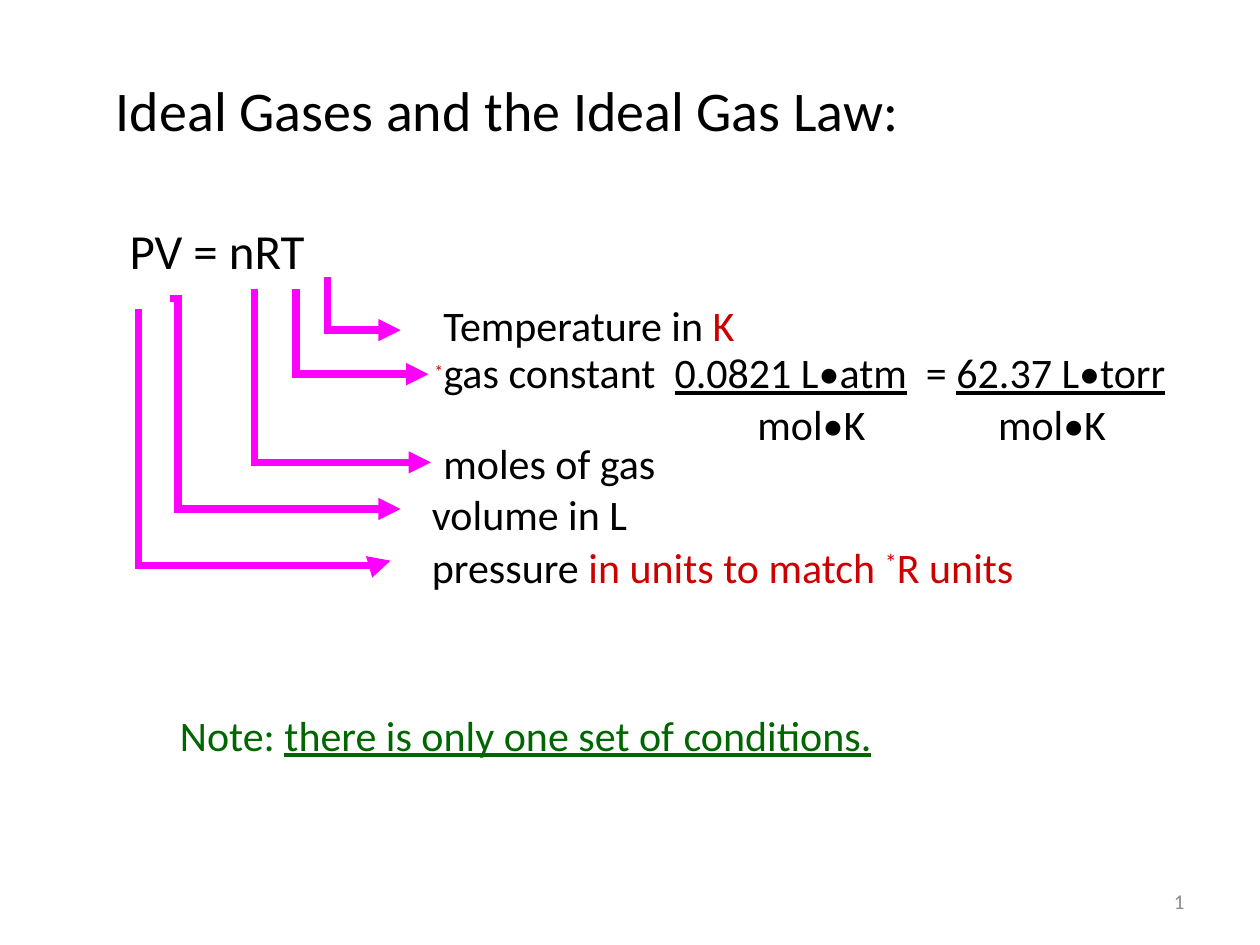
from lxml import etree
from pptx import Presentation
from pptx.dml.color import RGBColor
from pptx.enum.shapes import MSO_CONNECTOR
from pptx.enum.text import MSO_ANCHOR, PP_ALIGN
from pptx.oxml.ns import qn
from pptx.util import Inches, Pt

ELBOW = MSO_CONNECTOR.ELBOW
LEFT, CENTER, RIGHT = PP_ALIGN.LEFT, PP_ALIGN.CENTER, PP_ALIGN.RIGHT
TOP, MIDDLE = MSO_ANCHOR.TOP, MSO_ANCHOR.MIDDLE

BLACK = RGBColor(0x00, 0x00, 0x00)
RED = RGBColor(0xCC, 0x00, 0x00)
GREEN = RGBColor(0x00, 0x66, 0x00)
GRAY = RGBColor(0x8C, 0x8C, 0x8C)
MAGENTA = RGBColor(0xFF, 0x00, 0xFF)

FONT = "Calibri"
SLIDE_WIDTH, SLIDE_HEIGHT = 10, 7.5
BODY_SIZE = 24
ARROW_WIDTH = 4.25
UNDERLINE = {"underline": True}
RAISED = {"raised": True}

TITLE = ((0.82, 0.55, 6.49, 0.64), [("Ideal Gases and the Ideal Gas Law:", BLACK, {"size": 32})])
TEXTS = [
    ((0.93, 1.7, 1.89, 0.57), [("PV = nRT", BLACK, {"size": 28})]),
    ((3.42, 2.33, 2.54, 0.5), [("Temperature in ", BLACK, {}), ("K", RED, {})]),
    ((3.35, 2.7, 6.06, 0.5), [
        ("*", RED, {"size": 18, **RAISED}), ("gas constant  ", BLACK, {}),
        ("0.0821 L•atm", BLACK, UNDERLINE), ("  = ", BLACK, {}),
        ("62.37 L•torr", BLACK, UNDERLINE),
    ]),
    ((3.42, 3.42, 1.92, 0.5), [("moles of gas", BLACK, {})]),
    ((3.33, 3.83, 1.77, 0.5), [("volume in L", BLACK, {})]),
    ((3.33, 4.25, 4.87, 0.5), [("pressure ", BLACK, {}), ("in units to match ", RED, {}),
                               ("*", RED, RAISED), ("R units", RED, {})]),
    ((1.33, 5.58, 5.85, 0.5), [("Note: ", GREEN, {}),
                               ("there is only one set of conditions.", GREEN, UNDERLINE)]),
]
DENOMINATOR = [("mol•K", BLACK, {})]
DENOMINATOR_CENTERS = [6.44, 8.35]
DENOMINATOR_TOP, DENOMINATOR_WIDTH, DENOMINATOR_HEIGHT = 3.11, 1.1, 0.5
SLIDE_NUMBER = ((7.17, 6.95, 2.33, 0.4), [("1", GRAY, {"size": 12})])

ARROWS = [
    ((2.6, 2.2), (3.18, 2.62), 0, False),
    ((2.35, 2.29), (3.4, 2.97), 0, False),
    ((2.02, 2.29), (3.42, 3.67), 0, False),
    ((1.35, 2.37), (3.18, 4.04), 0.034, False),
    ((1.1, 2.45), (3.1, 4.45), 1.02, True),
]


def place(shape, box):
    shape.left, shape.top, shape.width, shape.height = map(Inches, box)


def add_run(paragraph, text, color, style):
    run = paragraph.add_run()
    run.text = text
    run.font.name = FONT
    run.font.size = Pt(style.get("size", BODY_SIZE))
    run.font.color.rgb = color
    if style.get("underline"):
        run.font.underline = True
    if style.get("raised"):
        run.font._element.set("baseline", "30000")


def write(shape, runs, alignment=LEFT, anchor=TOP, wrap=False):
    frame = shape.text_frame
    frame.word_wrap = wrap
    frame.vertical_anchor = anchor
    paragraph = frame.paragraphs[0]
    paragraph.alignment = alignment
    for text, color, style in runs:
        add_run(paragraph, text, color, style)


def add_text(slide, box, runs, **layout):
    shape = slide.shapes.add_textbox(*map(Inches, box))
    write(shape, runs, **layout)


def add_arrow(slide, start, end, bend, starts_down):
    connector = slide.shapes.add_connector(ELBOW, *map(Inches, start + end))
    connector.line.color.rgb = MAGENTA
    connector.line.width = Pt(ARROW_WIDTH)
    properties = connector._element.spPr
    outline = properties.find(qn("a:ln"))
    etree.SubElement(outline, qn("a:miter"), lim="800000")
    etree.SubElement(outline, qn("a:tailEnd"), type="triangle")
    etree.SubElement(properties, qn("a:effectLst"))
    guides = properties.find(qn("a:prstGeom")).get_or_add_avLst()
    etree.SubElement(guides, qn("a:gd"), name="adj1", fmla=f"val {round(bend * 100000)}")
    if starts_down:
        transform = properties.find(qn("a:xfrm"))
        transform.set("rot", str(270 * 60000))
        transform.set("flipH", "1")


def main():
    presentation = Presentation()
    presentation.slide_width = Inches(SLIDE_WIDTH)
    presentation.slide_height = Inches(SLIDE_HEIGHT)
    slide = presentation.slides.add_slide(presentation.slide_layouts[5])

    title_box, title_runs = TITLE
    place(slide.shapes.title, title_box)
    write(slide.shapes.title, title_runs)
    for arrow in ARROWS:
        add_arrow(slide, *arrow)
    for box, runs in TEXTS:
        add_text(slide, box, runs)
    for center in DENOMINATOR_CENTERS:
        box = (center - DENOMINATOR_WIDTH / 2, DENOMINATOR_TOP, DENOMINATOR_WIDTH, DENOMINATOR_HEIGHT)
        add_text(slide, box, DENOMINATOR, alignment=CENTER, wrap=True)
    add_text(slide, *SLIDE_NUMBER, alignment=RIGHT, anchor=MIDDLE, wrap=True)

    presentation.save("out.pptx")


if __name__ == "__main__":
    main()
